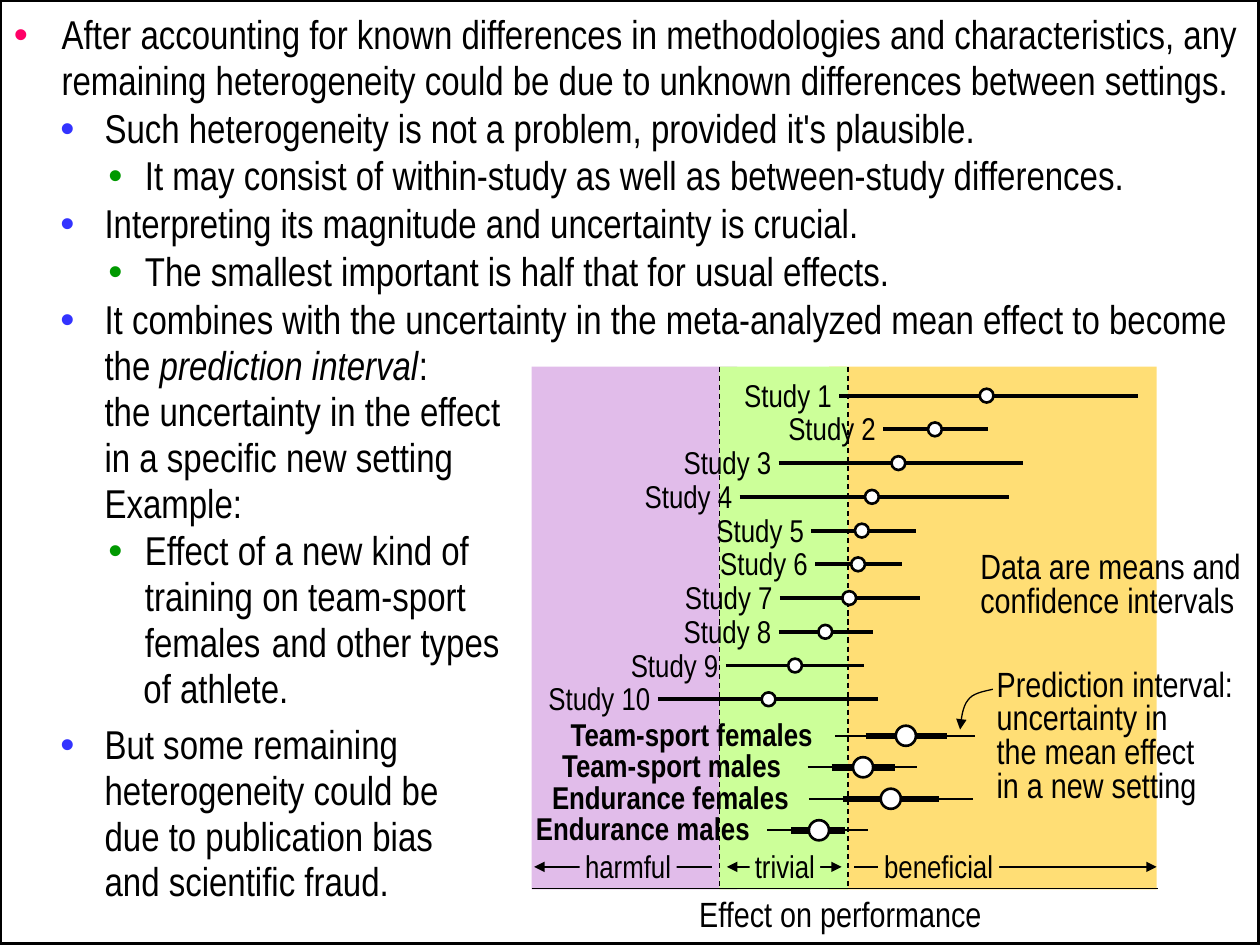
from lxml import etree
from pptx import Presentation
from pptx import util as u
from pptx.dml.color import RGBColor
from pptx.enum import dml, shapes, text
from pptx.oxml import ns

HUES = {
    "ink": "000000", "paper": "FFFFFF", "gold": "FFDE75", "mauve": "E1BCEA",
    "lime": "CCFF99", "pink": "FF0066", "blue": "3333FF", "green": "009900",
}
LEVELS = [(0.38, -0.38, "pink"), (0.72, -0.35, "blue"), (1.04, -0.29, "green")]
ROMAN, SLANT = False, True
POINTS = [
    (0, 1.2, [("After accounting for known differences in methodologies and characteristics, any "
               "remaining heterogeneity could be due to unknown differences between settings.", ROMAN)]),
    (1, 1.2, [("Such heterogeneity is not a problem, provided it's plausible.", ROMAN)]),
    (2, 1.2, [("It may consist of within-study as well as between-study differences.", ROMAN)]),
    (1, 1.2, [("Interpreting its magnitude and uncertainty is crucial.", ROMAN)]),
    (2, 1.2, [("The smallest important is half that for usual effects.", ROMAN)]),
    (1, 1.2, [("It combines with the uncertainty in the meta-analyzed mean effect to become the ", ROMAN),
              ("prediction interval", SLANT),
              (":\nthe uncertainty in the effect\nin a specific new setting\nExample:", ROMAN)]),
    (2, 1.2, [("Effect of a new kind of\ntraining on team-sport\nfemales", ROMAN)]),
    (1, 32, [("But some remaining\nheterogeneity could be\ndue to publication bias\n"
              "and scientific fraud.", ROMAN)]),
]
STUDIES = [
    (6.66, 7.83, 9.03), (7.01, 7.42, 7.84), (6.18, 7.13, 8.12), (5.87, 6.92, 8.01),
    (6.44, 6.84, 7.27), (6.47, 6.81, 7.16), (6.19, 6.74, 7.3), (6.18, 6.55, 6.93),
    (5.76, 6.31, 6.86), (5.22, 6.1, 6.97),
]
TEAMS = [
    ("Team-sport females", 4.41, 6.55, 6.63, 6.87, 7.19, 7.52, 7.74),
    ("Team-sport males", 4.34, 6.3, 6.41, 6.6, 6.85, 7.1, 7.28),
    ("Endurance females", 4.26, 6.36, 6.42, 6.69, 7.07, 7.45, 7.72),
    ("Endurance males", 4.13, 6.05, 6.09, 6.28, 6.5, 6.71, 6.89),
]
CURVE = [
    [(7.88, 5.47), (7.8, 5.49), (7.72, 5.5), (7.68, 5.56)],
    [(7.68, 5.56), (7.64, 5.61), (7.63, 5.7), (7.62, 5.79)],
]


def cm(inch):
    """Turn inches into a Cm length."""
    return u.Cm(inch * 2.54)


def hue(name):
    """Look up a named colour."""
    return RGBColor.from_string(HUES[name])


def bezier(pts, t):
    """Find the point at t on a cubic curve."""
    s = 1 - t
    ws = (s ** 3, 3 * s * s * t, 3 * s * t * t, t ** 3)
    return tuple(sum(w * p[k] for w, p in zip(ws, pts)) for k in (0, 1))


class Board:
    """Hold the style and the current slide."""

    font = "Arial Narrow"

    def __init__(self, slide):
        """Start on a slide."""
        self.slide = slide
        self.items = slide.shapes

    def say(self, par, words, size, bold=None, slant=None):
        """Add words to a paragraph, run by run."""
        for i, line in enumerate(words.split("\n")):
            if i:
                par.add_line_break()
            run = par.add_run()
            run.text = line
            run.font.name, run.font.size = self.font, u.Pt(size)
            run.font.bold, run.font.italic = bold, slant
            run.font.color.rgb = hue("ink")

    def frame(self, shape, side, top, low, wrap=True, grow=True):
        """Set margins and fitting of a text frame."""
        tf = shape.text_frame
        tf.word_wrap = wrap
        tf.auto_size = text.MSO_AUTO_SIZE.SHAPE_TO_FIT_TEXT if grow else text.MSO_AUTO_SIZE.NONE
        tf.vertical_anchor = text.MSO_ANCHOR.TOP
        tf.margin_left = tf.margin_right = cm(side)
        tf.margin_top, tf.margin_bottom = cm(top), cm(low)
        return tf

    def body(self, box, points):
        """Fill the body placeholder with bullets."""
        shape = self.slide.placeholders[1]
        shape.left, shape.top, shape.width, shape.height = map(cm, box)
        shape.fill.solid()
        shape.fill.fore_color.rgb = hue("paper")
        self.pen(shape.line, 0.75)
        tf = self.frame(shape, 0.1, 0.09, 0.05, grow=False)
        for i, (level, gap, runs) in enumerate(points):
            par = tf.add_paragraph() if i else tf.paragraphs[0]
            par.level, par.line_spacing, par.space_before = level, 0.95, u.Pt(gap)
            par.alignment = text.PP_ALIGN.LEFT
            left, hang, tint = LEVELS[level]
            ppr = par._p.get_or_add_pPr()
            ppr.set("marL", str(cm(left)))
            ppr.set("indent", str(cm(hang)))
            clr = etree.SubElement(ppr, ns.qn("a:buClr"))
            etree.SubElement(clr, ns.qn("a:srgbClr"), val=HUES[tint])
            etree.SubElement(ppr, ns.qn("a:buFont"), typeface="Arial")
            etree.SubElement(ppr, ns.qn("a:buChar"), char="•")
            for words, slant in runs:
                self.say(par, words, 23, slant=slant)

    def pen(self, line, width):
        """Ink a line."""
        line.color.rgb, line.width = hue("ink"), u.Pt(width)

    def tip(self, line, *ends):
        """Put arrowheads on a line."""
        for end in ends:
            etree.SubElement(line._get_or_add_ln(), ns.qn("a:" + end), type="triangle")

    def line(self, x1, y1, x2, y2, width=0.75, dash=False, ends=()):
        """Draw a straight line."""
        item = self.items.add_connector(shapes.MSO_CONNECTOR.STRAIGHT, *map(cm, (x1, y1, x2, y2)))
        self.pen(item.line, width)
        if dash:
            item.line.dash_style = dml.MSO_LINE.DASH
        self.tip(item.line, *ends)
        etree.SubElement(item._element.spPr, ns.qn("a:effectLst"))

    def block(self, box, tint, kind=shapes.MSO_SHAPE.RECTANGLE, width=0):
        """Draw a filled shape."""
        item = self.items.add_shape(kind, *map(cm, box))
        item.shadow.inherit = False
        item.fill.solid()
        item.fill.fore_color.rgb = hue(tint)
        if width:
            self.pen(item.line, width)
        else:
            item.line.fill.background()
        return item

    def dot(self, x, y, size):
        """Mark a mean with a circle."""
        self.block((x - size / 2, y - size / 2, size, size), "paper", shapes.MSO_SHAPE.OVAL, 1.5)

    def tag(self, box, words, tint, size=18):
        """Draw a filled label with centred text."""
        par = self.frame(self.block(box, tint), 0.04, 0, 0, wrap=False).paragraphs[0]
        par.alignment, par.line_spacing = text.PP_ALIGN.CENTER, 0.8
        self.say(par, words, size)

    def name(self, left, right, y, words, bold=None):
        """Add a row name that ends at right."""
        item = self.items.add_textbox(*map(cm, (left, y, right - left, 0.34)))
        par = self.frame(item, 0.1, 0.05, 0.05, wrap=False).paragraphs[0]
        par.alignment, par.line_spacing = text.PP_ALIGN.RIGHT, 0.8
        self.say(par, words, 18, bold)

    def note(self, box, words, size=20, side=0.04, top=0, pitch=0.8, indent=0):
        """Add a wrapped note."""
        item = self.items.add_textbox(*map(cm, box))
        par = self.frame(item, side, top, top).paragraphs[0]
        par.line_spacing = pitch
        par._p.get_or_add_pPr().set("indent", str(cm(indent)))
        self.say(par, words, size)

    def curve(self, parts, steps=8):
        """Draw an open curve with an arrowhead."""
        pts = [bezier(p, i / steps) for p in parts for i in range(1, steps + 1)]
        pen = self.items.build_freeform(*map(cm, parts[0][0]))
        pen.add_line_segments([(cm(x), cm(y)) for x, y in pts], close=False)
        item = pen.convert_to_shape()
        item.shadow.inherit = False
        item.fill.background()
        self.pen(item.line, 0.75)
        self.tip(item.line, "tailEnd")


def main():
    """Build the slide."""
    deck = Presentation()
    deck.slide_width, deck.slide_height = cm(10), cm(7.5)
    slide = deck.slides.add_slide(deck.slide_layouts[1])
    title = slide.shapes.title._element
    title.getparent().remove(title)
    slide.background.fill.solid()
    slide.background.fill.fore_color.rgb = hue("ink")
    board = Board(slide)
    board.body((0.01, 0.01, 9.97, 7.47), POINTS)

    for left, wide, tint in ((6.58, 2.6, "gold"), (4.22, 1.63, "mauve"), (5.71, 1.02, "lime")):
        board.block((left, 2.91, wide, 4.15), tint)
    for x in (6.73, 5.71):
        board.line(x, 2.91, x, 7.05, dash=True)
    for x1, x2, ends, left, wide, words, tint in (
        (6.78, 9.18, ["tailEnd"], 6.97, 0.96, "beneficial", "gold"),
        (5.65, 4.24, ["tailEnd"], 4.6, 0.77, "harmful", "mauve"),
        (6.68, 5.77, ["headEnd", "tailEnd"], 5.95, 0.56, "trivial", "lime"),
    ):
        board.line(x1, 6.88, x2, 6.88, ends=ends)
        board.tag((left, 6.78, wide, 0.21), words, tint)
    board.line(4.22, 7.05, 9.19, 7.05)
    board.tag((5.5, 7.15, 2.34, 0.27), "Effect on performance", "paper", 20)

    for i, (low, mean, high) in enumerate(STUDIES):
        y = 3.14 + i * 2.41 / 9
        board.name(low - (0.87 if i < 9 else 0.98), low + 0.04, y - 0.15, f"Study {i + 1}")
        board.line(low, y, high, y, 2.25)
        board.dot(mean, y, 0.11)
    board.note((7.74, 4.39, 2.18, 0.54), "Data are means and confidence intervals")
    board.note((7.87, 5.32, 1.96, 1.08),
               "Prediction interval:\nuncertainty in\nthe mean effect\nin a new setting")
    board.curve(CURVE)
    for i, (words, left, right, far, low, mean, high, end) in enumerate(TEAMS):
        y = 5.84 + i * 0.25
        board.line(far, y, end, y, 1)
        board.line(low, y, high, y, 3.75)
        board.name(left, right, y - 0.16, words, True)
        board.dot(mean, y, 0.16)
    board.note((1.04, 4.88, 3.1, 0.84), "and other types\nof athlete.", 23, 0.1, 0.05, 0.95, 1.02)
    deck.save("out.pptx")


if __name__ == "__main__":
    main()
